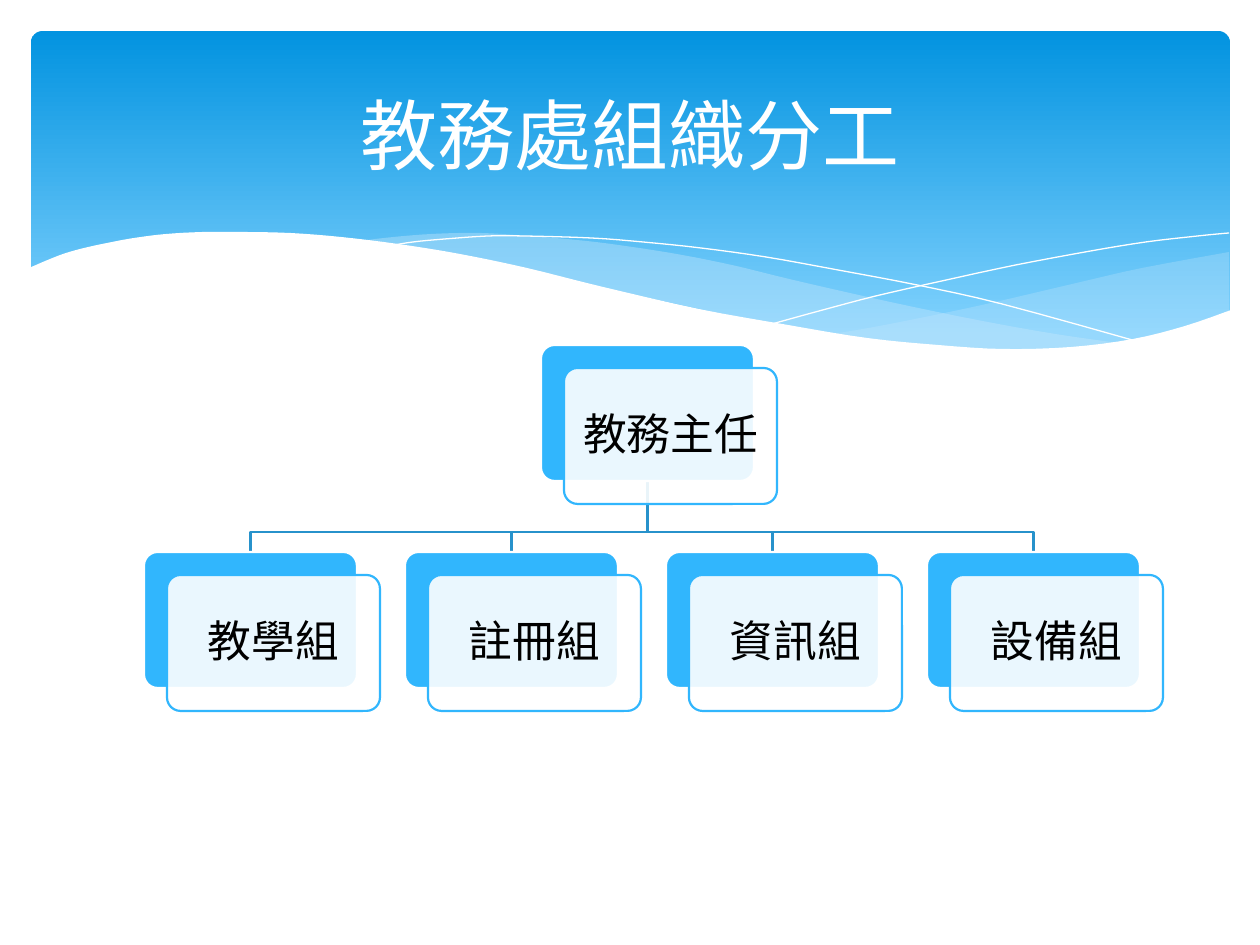
from pptx import Presentation
from pptx.dml.color import RGBColor
from pptx.enum.shapes import MSO_SHAPE
from pptx.enum.text import MSO_ANCHOR, PP_ALIGN
from pptx.oxml.ns import qn
from pptx.util import Emu, Pt
from lxml.etree import SubElement

TITLE = "教務處組織分工"
DIRECTOR = "教務主任"
SECTIONS = ["教學組", "註冊組", "資訊組", "設備組"]

FONT = "Cabin"
COLORS = {
    "white": "FFFFFF", "black": "000000", "sky_top": "0293E0", "sky_bottom": "83D3FE",
    "mist": "C6E7FC", "box": "31B6FD", "connector": "2792CB",
}

# Curves of the header, in px
RIGHT_BAND_TOP = [(1229, 252), (1142, 268), (1085, 281), (982, 305), (890, 324), (833, 334)]
RIGHT_BAND_BOTTOM = [(833, 334), (871, 339), (922, 345), (969, 348), (1012, 350), (1064, 349),
                     (1120, 343), (1169, 332), (1213, 317), (1229, 311)]
LONG_BAND_TOP = [(1125, 344), (1055, 334), (977, 320), (890, 302), (793, 280), (736, 266),
                 (682, 255), (632, 247), (586, 241), (529, 236), (479, 233), (433, 234),
                 (394, 237), (360, 241)]
LONG_BAND_BOTTOM = [(360, 241), (431, 251), (507, 266), (566, 280), (668, 302), (757, 321),
                    (838, 335), (909, 344), (974, 349), (1030, 350), (1081, 349), (1125, 344)]
FALLING_LINE = [(389, 246), (413, 242), (445, 239), (488, 236), (524, 236), (591, 238),
                (643, 242), (701, 248), (766, 257), (838, 270), (917, 285), (1002, 304),
                (1143, 343)]
RISING_LINE = [(772, 324), (823, 310), (876, 296), (942, 281), (1016, 265), (1091, 251),
               (1146, 242), (1198, 236), (1229, 233)]
WAVE_EDGE = [(1231, 310), (1185, 326), (1133, 339), (1071, 347), (1003, 349), (938, 345),
             (867, 338), (788, 325), (699, 309), (599, 286), (527, 268), (460, 254),
             (398, 244), (341, 237), (290, 233), (243, 232), (203, 232), (166, 234),
             (134, 238), (107, 243), (84, 248), (66, 253), (50, 259), (29, 268)]
WAVE_BASE = [(29, 415), (1231, 415)]

BOX_WIDTH, BOX_HEIGHT, BOX_OFFSET = 213, 136, 23
DIRECTOR_LEFT, DIRECTOR_TOP = 541, 345
SECTION_LEFT, SECTION_TOP, SECTION_STEP = 144, 552, 261
ELBOW_Y = 532


def px(value):
    return Emu(round(value * 914400 / 126))


def rgb(name):
    return RGBColor.from_string(COLORS[name])


def smooth(points, steps=4):
    """Catmull-Rom curve through the points."""
    padded = [points[0], *points, points[-1]]
    curve = []
    for a, b, c, d in zip(padded, padded[1:], padded[2:], padded[3:]):
        for step in range(steps):
            t = step / steps
            curve.append(tuple(
                0.5 * (2 * q + (r - p) * t + (2 * p - 5 * q + 4 * r - s) * t ** 2
                       + (3 * q - p - 3 * r + s) * t ** 3)
                for p, q, r, s in zip(a, b, c, d)))
    return curve + [points[-1]]


def paint(shape, fill=None, opacity=100, line=None, width=0):
    shape.shadow.inherit = False
    if fill:
        shape.fill.solid()
        shape.fill.fore_color.rgb = rgb(fill)
        if opacity < 100:
            color = shape.fill._xPr.find(qn("a:solidFill"))[0]
            SubElement(color, qn("a:alpha"), val=str(opacity * 1000))
    else:
        shape.fill.background()
    if line:
        shape.line.color.rgb = rgb(line)
        shape.line.width = Pt(width)
    else:
        shape.line.fill.background()


def add_path(shapes, points, closed=False, **look):
    corners = [(px(x), px(y)) for x, y in points]
    builder = shapes.build_freeform(*corners[0], scale=1.0)
    builder.add_line_segments(corners[1:], close=closed)
    paint(builder.convert_to_shape(), **look)


def add_round_box(shapes, left, top, width, height, corner):
    shape = shapes.add_shape(MSO_SHAPE.ROUNDED_RECTANGLE, px(left), px(top), px(width), px(height))
    shape.adjustments[0] = corner
    return shape


def write(shape, text, size, color, **frame_format):
    frame = shape.text_frame
    for name, value in {"word_wrap": True, "vertical_anchor": MSO_ANCHOR.MIDDLE,
                        **frame_format}.items():
        setattr(frame, name, value)
    paragraph = frame.paragraphs[0]
    paragraph.alignment = PP_ALIGN.CENTER
    run = paragraph.add_run()
    run.text = text
    for name, value in {"name": FONT, "size": Pt(size)}.items():
        setattr(run.font, name, value)
    run.font.color.rgb = rgb(color)
    return paragraph


def add_header(shapes):
    sky = add_round_box(shapes, 31, 31, 1199, 340, 0.034)
    paint(sky)
    sky.fill.gradient()
    sky.fill.gradient_angle = 270
    for stop, name, position in zip(sky.fill.gradient_stops, ("sky_top", "sky_bottom"), (0, 0.9)):
        stop.color.rgb = rgb(name)
        stop.position = position
    add_path(shapes, smooth(RIGHT_BAND_TOP) + smooth(RIGHT_BAND_BOTTOM), True,
             fill="mist", opacity=29)
    add_path(shapes, smooth(LONG_BAND_TOP) + smooth(LONG_BAND_BOTTOM), True,
             fill="mist", opacity=40)
    for curve in (FALLING_LINE, RISING_LINE):
        add_path(shapes, smooth(curve), line="white")
    add_path(shapes, smooth(WAVE_EDGE) + WAVE_BASE, True, fill="white")


def add_unit(shapes, text, left, top):
    """Solid back box with a labelled, nearly opaque box in front."""
    back = add_round_box(shapes, left, top, BOX_WIDTH, BOX_HEIGHT, 0.1)
    paint(back, fill="box", line="white", width=1.25)
    front = add_round_box(shapes, left + BOX_OFFSET, top + BOX_OFFSET, BOX_WIDTH, BOX_HEIGHT, 0.1)
    paint(front, fill="white", opacity=90, line="box", width=1.25)
    margins = {f"margin_{side}": px(12) for side in ("left", "right", "top", "bottom")}
    write(front, text, 25, "black", **margins).line_spacing = 0.9


def main():
    presentation = Presentation()
    presentation.slide_width, presentation.slide_height = px(1260), px(945)
    slide = presentation.slides.add_slide(presentation.slide_layouts[5])
    shapes = slide.shapes
    add_header(shapes)

    section_lefts = [SECTION_LEFT + SECTION_STEP * index for index in range(len(SECTIONS))]
    trunk_x = DIRECTOR_LEFT + BOX_WIDTH / 2
    for left in reversed(section_lefts):
        branch_x = left + BOX_WIDTH / 2
        add_path(shapes, [(trunk_x, DIRECTOR_TOP + BOX_HEIGHT), (trunk_x, ELBOW_Y),
                          (branch_x, ELBOW_Y), (branch_x, SECTION_TOP)],
                 line="connector", width=1.25)
    add_unit(shapes, DIRECTOR, DIRECTOR_LEFT, DIRECTOR_TOP)
    for text, left in zip(SECTIONS, section_lefts):
        add_unit(shapes, text, left, SECTION_TOP)

    title = shapes.title
    for name, value in {"left": 63, "top": 47, "width": 1134, "height": 173}.items():
        setattr(title, name, px(value))
    write(title, TITLE, 44, "white")
    shapes._spTree.append(title._element)
    presentation.save("out.pptx")


if __name__ == "__main__":
    main()
